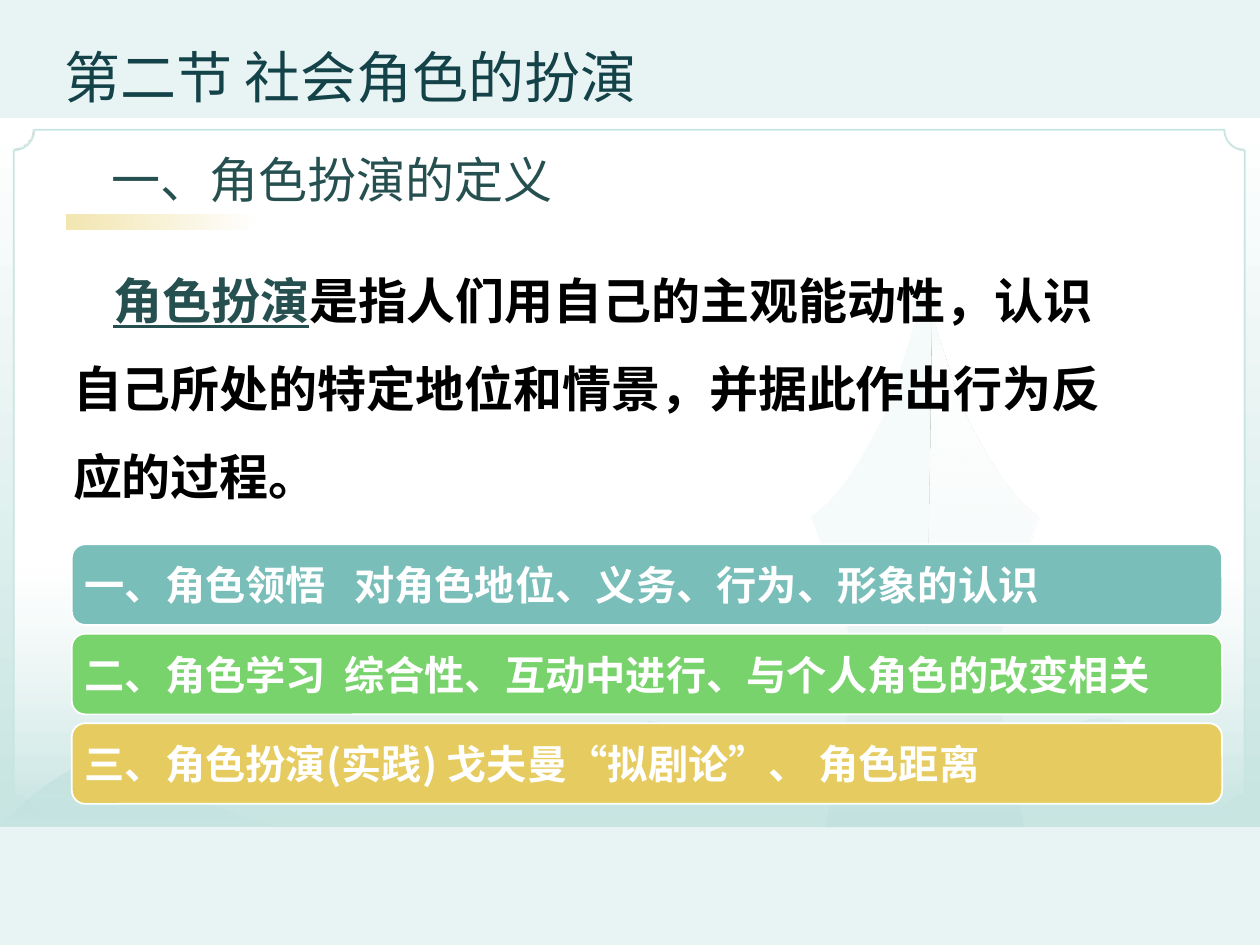
"""Build the slide on the definition and stages of social role playing."""
import pptx
import pptx.util
import pptx.dml.color
import pptx.enum.shapes
import pptx.enum.text
import pptx.oxml
import pptx.oxml.ns

Inches, Pt = pptx.util.Inches, pptx.util.Pt
RGBColor = pptx.dml.color.RGBColor
MSO_SHAPE = pptx.enum.shapes.MSO_SHAPE
qn = pptx.oxml.ns.qn

FONT = "Noto Sans CJK SC"
PALE = RGBColor(0xE8, 0xF4, 0xF3)
MIST = RGBColor(0xC8, 0xE5, 0xE2)
HAZE = RGBColor(0xB5, 0xDC, 0xDB)
TEAL = RGBColor(0x4C, 0xA1, 0x9F)
AQUA = RGBColor(0x7A, 0xBE, 0xBA)
GREEN = RGBColor(0x79, 0xD3, 0x6C)
GOLD = RGBColor(0xE6, 0xCC, 0x60)
WHITE = RGBColor(0xFF, 0xFF, 0xFF)
BLACK = RGBColor(0, 0, 0)
NAVY = RGBColor(0x14, 0x42, 0x49)
PINE = RGBColor(0x26, 0x50, 0x50)


def paint(sp, stops, angle=90):
    """Fill a shape from (position, colour, opacity) stops, without line or shadow."""
    sp.shadow.inherit = False
    sp.line.fill.background()
    sp.fill.background()
    colors = [f'<a:srgbClr val="{c}"><a:alpha val="{a * 1000}"/></a:srgbClr>' for _, c, a in stops]
    ns = pptx.oxml.ns.nsdecls("a")
    if len(stops) == 1:
        xml = f"<a:solidFill {ns}>{colors[0]}</a:solidFill>"
    else:
        gs = "".join(f'<a:gs pos="{st[0] * 1000}">{c}</a:gs>' for st, c in zip(stops, colors))
        xml = (f'<a:gradFill {ns} rotWithShape="1"><a:gsLst>{gs}</a:gsLst>'
               f'<a:lin ang="{angle * 60000}" scaled="0"/></a:gradFill>')
    spPr = sp._element.spPr
    spPr.replace(spPr.find(qn("a:noFill")), pptx.oxml.parse_xml(xml))


def add_run(p, text, size, color, bold=False):
    """Add one formatted run to a paragraph."""
    r = p.add_run()
    r.text = text
    r.font.size, r.font.bold = Pt(size), bold
    r.font.color.rgb = color
    r.font.name = FONT
    ea = r.font._element.makeelement(qn("a:ea"), {"typeface": FONT})
    r.font._element.find(qn("a:latin")).addnext(ea)
    return r


prs = pptx.Presentation()
prs.slide_width, prs.slide_height = Inches(10), Inches(7.5)
s = prs.slides.add_slide(prs.slide_layouts[1])
s.background.fill.solid()
s.background.fill.fore_color.rgb = PALE

panels = [
    (MSO_SHAPE.RECTANGLE, (0, 0.94, 10, 5.62), [(0, WHITE, 100), (97, MIST, 100)], 90),
    (MSO_SHAPE.PLAQUE, (0.11, 1.03, 9.77, 5.44), [(64, WHITE, 100), (100, WHITE, 0)], 90),
    (MSO_SHAPE.RECTANGLE, (0.53, 1.7, 1.5, 0.12), [(0, GOLD, 0), (100, GOLD, 50)], 180),
]
for kind, box, stops, angle in panels:
    sp = s.shapes.add_shape(kind, *map(Inches, box))
    paint(sp, stops, angle)
    if kind == MSO_SHAPE.PLAQUE:
        sp.adjustments[0] = 0.03
        sp.line.color.rgb = MIST
        sp.line.width = Pt(1)

right_hill = [(9.57, 6.2), (9.57, 6.2), (9.09, 5.7), (8.76, 5.7), (8.42, 5.69), (8.17, 5.92),
              (8.07, 6), (8.01, 6.04), (7.97, 6.08), (7.79, 5.98), (7.62, 5.88), (7.4, 5.9),
              (7.02, 6.06), (6.73, 6.18), (6.44, 6.2), (6.44, 6.2)]
middle_hill = [(5.81, 6.2), (5.81, 6.2), (5.44, 5.74), (5.18, 5.73), (4.92, 5.72), (4.73, 5.94),
               (4.65, 6.01), (4.6, 6.06), (4.58, 6.09), (4.33, 6), (4.18, 5.95), (4.04, 6),
               (3.95, 6.06), (3.87, 6.12), (3.58, 6.09), (3.44, 6), (3.3, 5.91), (3.14, 5.92),
               (2.85, 6.07), (2.62, 6.18), (2.39, 6.2), (2.39, 6.2)]
left_hill = [(2.23, 6.56), (2.23, 6.56), (1.98, 6.51), (1.89, 6.47), (1.8, 6.43), (1.68, 6.37),
             (1.56, 6.38), (1.46, 6.4), (1.16, 6.02), (0.88, 6.02), (0.6, 6.01), (0.2, 6.34),
             (0, 6.56)]
nib_side = [(7.34, 2.31), (7.43, 2.31), (7.46, 2.42), (7.4, 2.49), (7.48, 2.77), (7.57, 3.05),
            (7.67, 3.31), (7.84, 3.64), (8, 3.93), (8.24, 4.1), (8.14, 4.4), (8, 4.75),
            (7.91, 5.18)]
nib_mirror = [(14.68 - x, y) for x, y in reversed(nib_side)]
nib = nib_side + [nib_side[-1], nib_mirror[0]] + nib_mirror
nib_shine = nib_side[3:] + [(7.91, 5.18), (7.36, 5.18), (7.36, 5.18)]

outlines = [
    (right_hill, [(0, HAZE, 20), (100, HAZE, 0)]),
    (middle_hill, [(0, HAZE, 30), (100, HAZE, 0)]),
    (left_hill, [(0, TEAL, 10), (99, TEAL, 0)]),
    (nib, [(0, TEAL, 5)]),
    (nib_shine, [(0, WHITE, 0), (14, WHITE, 100), (97, WHITE, 0)]),
]
for pts, stops in outlines:
    start, *rest = [(Inches(x), Inches(y)) for x, y in pts]
    fb = s.shapes.build_freeform(*start)
    fb.add_line_segments(rest, close=True)
    sp = fb.convert_to_shape()
    lines = list(sp._element.iter(qn("a:lnTo")))
    for i in range(0, len(rest), 3):
        curve = lines[i].makeelement(qn("a:cubicBezTo"), {})
        lines[i].addprevious(curve)
        for line in lines[i:i + 3]:
            curve.append(line[0])
            line.getparent().remove(line)
    paint(sp, stops)

sp = s.shapes.add_shape(MSO_SHAPE.TRAPEZOID, Inches(6.55), Inches(5.31), Inches(1.58), Inches(1.26))
sp.adjustments[0] = 0.2
paint(sp, [(0, TEAL, 4)])

title, body = s.shapes.title, s.placeholders[1]
for sp, box in ((body, (0.28, 1.86, 8.86, 4)), (title, (0.51, 0.28, 8.86, 0.59))):
    sp.left, sp.top, sp.width, sp.height = map(Inches, box)
    sp.text_frame.auto_size = pptx.enum.text.MSO_AUTO_SIZE.NONE
    s.shapes._spTree.append(sp._element)

p = body.text_frame.paragraphs[0]
p.line_spacing, p.space_before = 1.5, Pt(5.6)
pPr = p._p.get_or_add_pPr()
pPr.set("marL", str(Inches(0.2)))
pPr.set("indent", str(Inches(0.32)))
pPr.append(pPr.makeelement(qn("a:buNone"), {}))
add_run(p, "角色扮演", 28, PINE, True).font.underline = True
add_run(p, "是指人们用自己的主观能动性，认识自己所处的特定地位和情景，并据此作出行为反应的过程。",
        28, BLACK, True)

tf = title.text_frame
tf.margin_left = tf.margin_top = tf.margin_right = tf.margin_bottom = 0
tf.vertical_anchor = pptx.enum.text.MSO_ANCHOR.BOTTOM
tf.paragraphs[0].alignment = pptx.enum.text.PP_ALIGN.LEFT
add_run(tf.paragraphs[0], "第二节 社会角色的扮演", 32, NAVY)

stages = [
    ("一、角色领悟\t对角色地位、义务、行为、形象的认识", AQUA, 2.14),
    ("二、角色学习\t综合性、互动中进行、与个人角色的改变相关", GREEN, 2.06),
    ("三、角色扮演(实践) 戈夫曼“拟剧论”、 角色距离", GOLD, None),
]
for i, (text, color, tab) in enumerate(stages):
    sp = s.shapes.add_shape(MSO_SHAPE.ROUNDED_RECTANGLE, Inches(0.57), Inches(4.32 + 0.71 * i),
                            Inches(9.13), Inches(0.64))
    sp.shadow.inherit = False
    sp.fill.solid()
    sp.fill.fore_color.rgb = color
    sp.line.color.rgb = WHITE
    sp.line.width = Pt(1)
    tf = sp.text_frame
    tf.word_wrap = True
    tf.margin_left = tf.margin_right = Inches(0.07)
    tf.vertical_anchor = pptx.enum.text.MSO_ANCHOR.MIDDLE
    p = tf.paragraphs[0]
    p.alignment = pptx.enum.text.PP_ALIGN.LEFT
    if tab:
        pPr = p._p.get_or_add_pPr()
        tabs = pPr.makeelement(qn("a:tabLst"), {})
        tabs.append(tabs.makeelement(qn("a:tab"), {"pos": str(Inches(tab)), "algn": "l"}))
        pPr.append(tabs)
    add_run(p, text, 23, WHITE, True)

sp = s.shapes.add_textbox(Inches(0.79), Inches(1.14), Inches(4.21), Inches(0.57))
sp.text_frame.word_wrap = True
add_run(sp.text_frame.paragraphs[0], "一、角色扮演的定义", 28, PINE)

prs.save("out.pptx")
